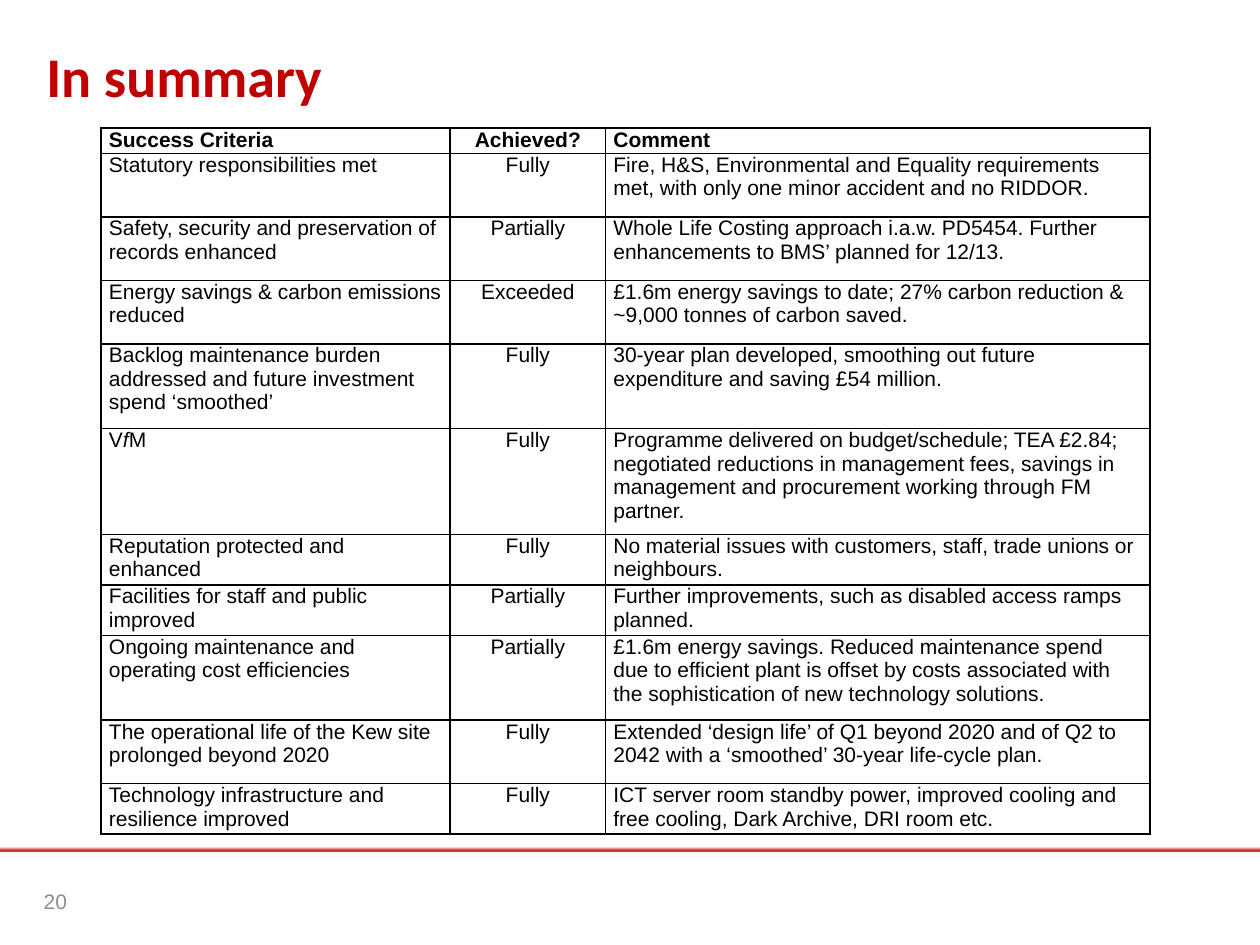
from typing import NamedTuple

from lxml import etree
from pptx import Presentation
from pptx.dml.color import RGBColor
from pptx.enum.shapes import MSO_SHAPE
from pptx.enum.text import MSO_ANCHOR, PP_ALIGN
from pptx.oxml.ns import qn
from pptx.util import Pt

LEFT, CENTER, RIGHT = PP_ALIGN.LEFT, PP_ALIGN.CENTER, PP_ALIGN.RIGHT
MIDDLE = MSO_ANCHOR.MIDDLE
RECTANGLE = MSO_SHAPE.RECTANGLE

BLACK, WHITE = "000000", "FFFFFF"
LINE_HEIGHT = 12.1
COLUMN_WIDTHS = (199.5, 88.8, 311)
COLUMN_ALIGNS = (LEFT, CENTER, LEFT)


class Run(NamedTuple):
    text: str
    italic: bool = False


class Criterion(NamedTuple):
    lines: int
    name: str | tuple[Run, ...]
    achieved: str
    comment: str


ROWS = (
    Criterion(1, "Success Criteria", "Achieved?", "Comment"),
    Criterion(3, "Statutory responsibilities met", "Fully",
              "Fire, H&S, Environmental and Equality requirements met, "
              "with only one minor accident and no RIDDOR."),
    Criterion(3, "Safety, security and preservation of records enhanced", "Partially",
              "Whole Life Costing approach i.a.w. PD5454. "
              "Further enhancements to BMS’ planned for 12/13."),
    Criterion(3, "Energy savings & carbon emissions reduced", "Exceeded",
              "£1.6m energy savings to date; 27% carbon reduction & "
              "~9,000 tonnes of carbon saved."),
    Criterion(4, "Backlog maintenance burden addressed and future investment spend ‘smoothed’",
              "Fully",
              "30-year plan developed, smoothing out future expenditure "
              "and saving £54 million."),
    Criterion(5, (Run("V"), Run("f", italic=True), Run("M")), "Fully",
              "Programme delivered on budget/schedule; TEA £2.84; negotiated reductions "
              "in management fees, savings in management and procurement working "
              "through FM partner."),
    Criterion(2, "Reputation protected and enhanced", "Fully",
              "No material issues with customers, staff, trade unions or neighbours."),
    Criterion(2, "Facilities for staff and public improved", "Partially",
              "Further improvements, such as disabled access ramps planned."),
    Criterion(4, "Ongoing maintenance and operating cost efficiencies", "Partially",
              "£1.6m energy savings. Reduced maintenance spend due to efficient plant is "
              "offset by costs associated with the sophistication of new technology solutions."),
    Criterion(3, "The operational life of the Kew site prolonged beyond 2020", "Fully",
              "Extended ‘design life’ of Q1 beyond 2020 and of Q2 to 2042 "
              "with a ‘smoothed’ 30-year life-cycle plan."),
    Criterion(2, "Technology infrastructure and resilience improved", "Fully",
              "ICT server room standby power, improved cooling and free cooling, "
              "Dark Archive, DRI room etc."),
)


def rgb(color: str) -> RGBColor:
    return RGBColor.from_string(color)


def write(tf, text: str | tuple[Run, ...], *, size: float = 12, font: str = "Arial",
          color: str = BLACK, bold: bool = False, align=LEFT) -> None:
    p = tf.paragraphs[0]
    p.alignment = align
    for part in (Run(text),) if isinstance(text, str) else text:
        r = p.add_run()
        r.text = part.text
        r.font.size = Pt(size)
        r.font.name = font
        r.font.bold = bold
        r.font.italic = part.italic
        r.font.color.rgb = rgb(color)


def add_label(slide, x: float, y: float, w: float, h: float, text: str, **style) -> None:
    tf = slide.shapes.add_textbox(Pt(x), Pt(y), Pt(w), Pt(h)).text_frame
    tf.word_wrap = True
    tf.vertical_anchor = MIDDLE
    write(tf, text, **style)


def add_rule(slide) -> None:
    """Draw the footer bar that fades upwards from red to white."""
    sp = slide.shapes.add_shape(RECTANGLE, Pt(0), Pt(481), Pt(720), Pt(5.8))
    sp.shadow.inherit = False
    sp.line.fill.background()
    sp.fill.gradient()
    sp.fill.gradient_angle = 90
    for stop, position, color in zip(sp.fill.gradient_stops, (0.18, 0.5), ("CC3333", WHITE)):
        stop.position = position
        stop.color.rgb = rgb(color)


def style_cell(cell) -> None:
    """Give a cell its insets, black borders and translucent white fill."""
    cell.margin_left = cell.margin_right = Pt(4.5)
    cell.margin_top = cell.margin_bottom = Pt(0)
    tc_pr = cell._tc.get_or_add_tcPr()
    for side in ("lnL", "lnR", "lnT", "lnB"):
        ln = etree.SubElement(tc_pr, qn(f"a:{side}"), w=str(Pt(1)))
        line_fill = etree.SubElement(ln, qn("a:solidFill"))
        etree.SubElement(line_fill, qn("a:srgbClr"), val=BLACK)
    cell.fill.solid()
    cell.fill.fore_color.rgb = rgb(WHITE)
    white = tc_pr.find(qn("a:solidFill")).find(qn("a:srgbClr"))
    etree.SubElement(white, qn("a:alpha"), val="39000")


def add_criteria_table(slide) -> None:
    height = LINE_HEIGHT * sum(row.lines for row in ROWS)
    table = slide.shapes.add_table(len(ROWS), len(COLUMN_WIDTHS), Pt(57.8), Pt(73.2),
                                   Pt(sum(COLUMN_WIDTHS)), Pt(height)).table
    table.horz_banding = False
    table.first_row = False
    for column, width in zip(table.columns, COLUMN_WIDTHS):
        column.width = Pt(width)
    for i, row in enumerate(ROWS):
        table.rows[i].height = Pt(LINE_HEIGHT * row.lines)
        texts = (row.name, row.achieved, row.comment)
        for j, (text, align) in enumerate(zip(texts, COLUMN_ALIGNS)):
            cell = table.cell(i, j)
            style_cell(cell)
            write(cell.text_frame, text, bold=i == 0, align=align)


def main() -> None:
    prs = Presentation()
    prs.slide_width, prs.slide_height = Pt(720), Pt(540)
    slide = prs.slides.add_slide(prs.slide_layouts[6])
    add_rule(slide)
    add_label(slide, 19.4, 23.8, 680.4, 38.2, "In summary",
              size=32, font="Calibri", color="C00000", bold=True)
    add_criteria_table(slide)
    add_label(slide, 2.2, 500.4, 43.2, 28.8, "20", color="8C8C8C", align=RIGHT)
    prs.save("out.pptx")


if __name__ == "__main__":
    main()
